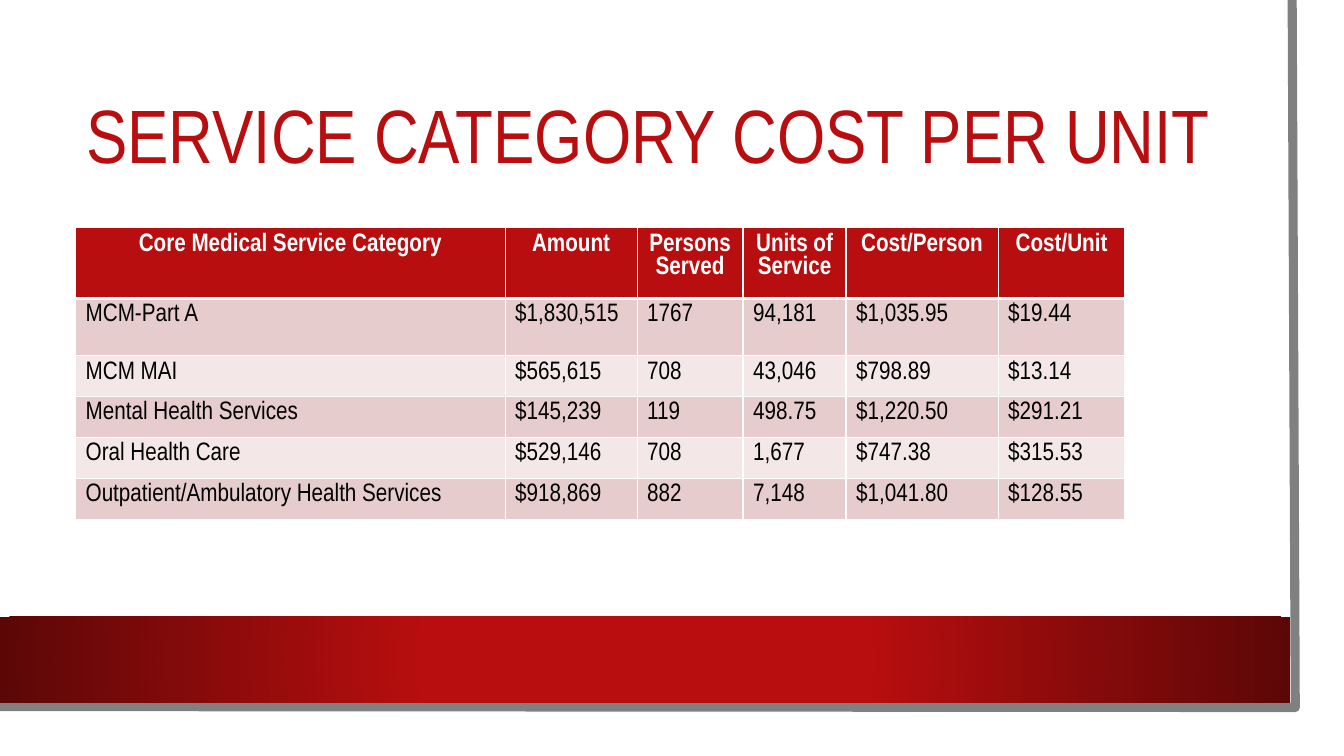
"""Build the service category cost slide."""
from pptx import Presentation
from pptx import util as u
from pptx.dml.color import RGBColor
from pptx.enum import shapes, text
from pptx.oxml import parse_xml
from pptx.oxml.ns import nsdecls, qn

TITLE = "SERVICE CATEGORY COST PER UNIT"
ROWS = [
    ("Core Medical Service Category", "Amount", "Persons Served", "Units of Service",
     "Cost/Person", "Cost/Unit"),
    ("MCM-Part A", "$1,830,515", "1767", "94,181", "$1,035.95", "$19.44"),
    ("MCM MAI", "$565,615", "708", "43,046", "$798.89", "$13.14"),
    ("Mental Health Services", "$145,239", "119", "498.75", "$1,220.50", "$291.21"),
    ("Oral Health Care", "$529,146", "708", "1,677", "$747.38", "$315.53"),
    ("Outpatient/Ambulatory Health Services", "$918,869", "882", "7,148", "$1,041.80",
     "$128.55"),
]
COLS = [306.8, 94.3, 75.7, 73.6, 108.6, 90.7]
HEIGHTS = [41, 41] + [29.2] * 4
EDGE = [(923, 0), (925.2, 505.4), (-2.2, 504.7)]
THEME = dict(font="Arial Narrow", title=54, body=18, red="B80E0F", dark="5C0707",
             grey="808080", white="FFFFFF", black="000000", bands=("F3E7E7", "E6CCCC"))


def rgb(name):
    return RGBColor.from_string(THEME.get(name, name))


def put_text(tf, content, size="body", color="black", bold=False, align="LEFT", spacing=None):
    p = tf.paragraphs[0]
    p.alignment = getattr(text.PP_ALIGN, align)
    p.line_spacing = spacing
    r = p.add_run()
    r.text = content
    r.font.name, r.font.size, r.font.bold = THEME["font"], u.Pt(THEME[size]), bold
    r.font.color.rgb = rgb(color)


def set_borders(cell, **widths):
    tc_pr = cell._tc.get_or_add_tcPr()
    for side in "LRTB":
        tc_pr.append(parse_xml(
            f'<a:ln{side} {nsdecls("a")} w="{u.Pt(widths.get(side, 1))}"><a:solidFill>'
            f'<a:srgbClr val="{THEME["white"]}"/></a:solidFill></a:ln{side}>'))


def add_frame(s):
    builder = s.shapes.build_freeform(u.Pt(EDGE[0][0]), u.Pt(EDGE[0][1]))
    builder.add_line_segments([(u.Pt(x), u.Pt(y)) for x, y in EDGE[1:]], close=False)
    sp = builder.convert_to_shape()
    sp.shadow.inherit = False
    sp.fill.background()
    sp.line.color.rgb, sp.line.width = rgb("grey"), u.Pt(6.5)


def add_band(s):
    sp = s.shapes.add_shape(shapes.MSO_SHAPE.RECTANGLE, 0, u.Pt(440.6), u.Pt(921.6), u.Pt(61.4))
    sp.shadow.inherit = False
    sp.line.fill.background()
    sp.fill.gradient()
    for stop, position, color in zip(sp.fill.gradient_stops, (0.34, 1), ("red", "dark")):
        stop.position, stop.color.rgb = position, rgb(color)
    grad = sp._element.spPr.find(qn("a:gradFill"))
    grad.replace(grad.find(qn("a:lin")), parse_xml(
        f'<a:path {nsdecls("a")} path="circle">'
        '<a:fillToRect l="50000" t="50000" r="50000" b="50000"/></a:path>'))


def add_title(s):
    tf = s.shapes.add_textbox(u.Pt(54), u.Pt(54), u.Pt(818.6), u.Pt(90.7)).text_frame
    tf.word_wrap = True
    tf.vertical_anchor = text.MSO_ANCHOR.MIDDLE
    put_text(tf, TITLE, size="title", color="red", align="CENTER", spacing=0.9)


def add_costs(s):
    table = s.shapes.add_table(len(ROWS), len(COLS), u.Pt(54), u.Pt(162.7),
                               u.Pt(sum(COLS)), u.Pt(sum(HEIGHTS))).table
    for column, width in zip(table.columns, COLS):
        column.width = u.Pt(width)
    for i, (row, values) in enumerate(zip(table.rows, ROWS)):
        row.height = u.Pt(HEIGHTS[i])
        head = i == 0
        for cell, value in zip(row.cells, values):
            set_borders(cell, B=3 if head else 1, T=3 if i == 1 else 1)
            cell.fill.solid()
            cell.fill.fore_color.rgb = rgb("red" if head else THEME["bands"][i % 2])
            put_text(cell.text_frame, value, color="white" if head else "black",
                     bold=head, align="CENTER" if head else "LEFT")


def main():
    prs = Presentation()
    prs.slide_width, prs.slide_height = u.Pt(960), u.Pt(540)
    s = prs.slides.add_slide(prs.slide_layouts[6])
    for add in (add_frame, add_band, add_title, add_costs):
        add(s)
    prs.save("out.pptx")


if __name__ == "__main__":
    main()
